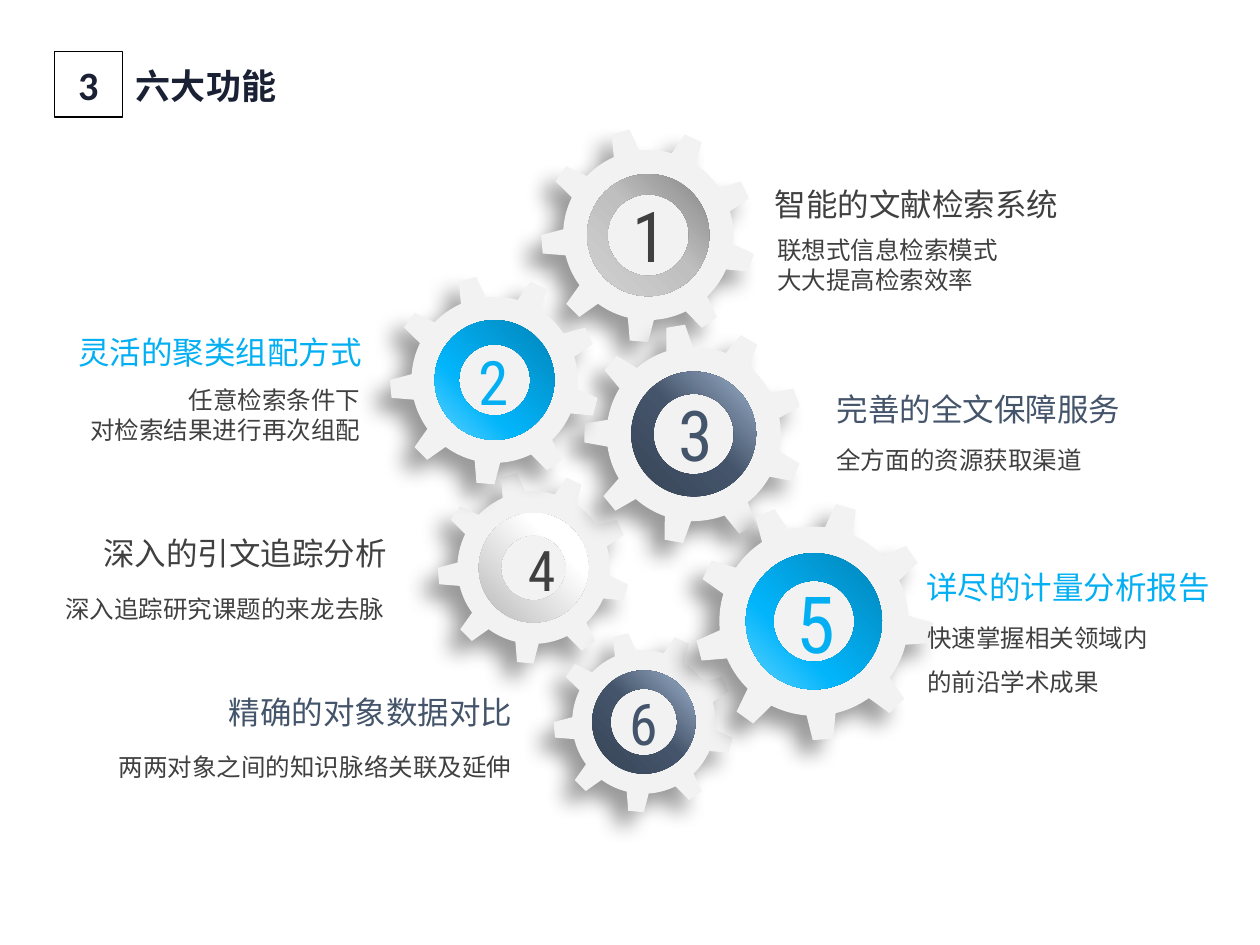
from lxml.etree import SubElement
from pptx import Presentation
from pptx.dml.color import RGBColor
from pptx.enum.shapes import MSO_SHAPE
from pptx.enum.text import MSO_ANCHOR, MSO_AUTO_SIZE, PP_ALIGN
from pptx.oxml import parse_xml
from pptx.oxml.ns import nsdecls, qn
from pptx.util import Pt

NAVY = RGBColor(0x1B, 0x21, 0x35)
BLACK = RGBColor(0, 0, 0)
DARK = RGBColor(0x40, 0x40, 0x40)
SLATE = RGBColor(0x44, 0x54, 0x6A)
BLUE = RGBColor(0x02, 0xAF, 0xF3)
PALE = RGBColor(0xF2, 0xF2, 0xF2)

CJK = "Noto Sans CJK SC"
DIGIT = "Roboto Condensed"
LEFT, CENTER, RIGHT = PP_ALIGN.LEFT, PP_ALIGN.CENTER, PP_ALIGN.RIGHT

# Ring gradients: stops in percent, then the direction
LINEAR = '<a:lin ang="8100000" scaled="0"/>'
RADIAL = '<a:path path="circle"><a:fillToRect l="100000" b="100000"/></a:path>'
WHITE_RING = ([(0, "FFFFFF"), (35, "FFFFFF"), (100, "A6A6A6")], RADIAL)
GRAY_RING = ([(0, "6F6F6F"), (23, "969696"), (48, "BFBFBF"), (100, "D9D9D9")], LINEAR)
SLATE_RING = ([(0, "D6DCE5"), (24, "8497B0"), (49, "44546A"), (100, "333F50")], RADIAL)
BLUE_RING = ([(0, "0175A3"), (61, "02B5FB"), (85, "61D2FE")], LINEAR)


def add_centered(kind, x, y, size, rotation, adjustments):
    shape = page.shapes.add_shape(kind, Pt(x - size / 2), Pt(y - size / 2), Pt(size), Pt(size))
    shape.rotation = rotation
    for index, value in enumerate(adjustments):
        shape.adjustments[index] = value
    shape.line.fill.background()
    shape.shadow.inherit = False
    return shape


def set_text(box, text, size, font, color, align=LEFT, spacing=None, bold=None):
    box.text_frame.text = text
    for paragraph in box.text_frame.paragraphs:
        paragraph.alignment = align
        paragraph.line_spacing = spacing
        for span in paragraph.runs:
            span.font.size = Pt(size)
            span.font.bold = bold
            span.font.color.rgb = color
            span.font.name = font
            SubElement(span._r.get_or_add_rPr(), qn("a:ea")).set("typeface", font)


deck = Presentation()
deck.slide_width, deck.slide_height = Pt(720), Pt(540)
page = deck.slides.add_slide(deck.slide_layouts[6])

# Gears with their rings: centre, gear size and turn, ring size, turn, thickness, gradient
gears = [
    (304.9, 324.4, 110.2, 65, 62.6, 230, 0.202, WHITE_RING),
    (370.4, 134.3, 123.1, 65, 69.8, 215, 0.166, GRAY_RING),
    (396.4, 248, 126, 70.5, 71.3, 215.3, 0.177, SLATE_RING),
    (282.6, 217.1, 120.2, 65, 68.4, 230, 0.202, BLUE_RING),
    (367.9, 412.6, 103.7, 65, 59, 209.8, 0.177, SLATE_RING),
    (465.1, 355, 136.8, 55.6, 77.8, 220.6, 0.202, BLUE_RING),
]
for x, y, size, turn, ring_size, ring_turn, thickness, (stops, direction) in gears:
    gear = add_centered(MSO_SHAPE.GEAR_9, x, y, size, turn, (0.105, 0.018))
    gear.fill.solid()
    gear.fill.fore_color.rgb = PALE
    gear._element.spPr.find(qn("a:effectLst")).append(parse_xml(
        f'<a:outerShdw {nsdecls("a")} blurRad="{Pt(12)}" dist="{Pt(11)}" dir="8100000" '
        'algn="tr" rotWithShape="0"><a:srgbClr val="000000"><a:alpha val="40000"/>'
        '</a:srgbClr></a:outerShdw>'))

    ring = add_centered(MSO_SHAPE.DONUT, x, y, ring_size, ring_turn, (thickness,))
    stop_list = "".join(f'<a:gs pos="{position * 1000}"><a:srgbClr val="{color}"/></a:gs>'
                        for position, color in stops)
    ring._element.spPr.find(qn("a:prstGeom")).addnext(parse_xml(
        f'<a:gradFill {nsdecls("a")} rotWithShape="0"><a:gsLst>{stop_list}</a:gsLst>'
        f'{direction}</a:gradFill>'))

# Title and section number
title = page.shapes.add_textbox(Pt(70.6), Pt(31.7), Pt(212.4), Pt(32.4))
title.text_frame.word_wrap = True
title.text_frame.vertical_anchor = MSO_ANCHOR.MIDDLE
set_text(title, "六大功能", 20, CJK, NAVY, spacing=1.1, bold=True)

badge = page.shapes.add_shape(MSO_SHAPE.RECTANGLE, Pt(31), Pt(29.5), Pt(38.9), Pt(37.4))
badge.shadow.inherit = False
badge.fill.background()
badge.line.color.rgb = BLACK
badge.line.width = Pt(0.75)
badge.text_frame.vertical_anchor = MSO_ANCHOR.MIDDLE
set_text(badge, "3", 23, "Calibri", NAVY, CENTER, bold=True)

# Gear numbers: left, top, width, height, text, size, color, wrap
numbers = [
    (354.2, 106.6, 30.2, 55.4, "1", 40, DARK, False),
    (265.7, 193, 32.4, 49.7, "2", 35, BLUE, False),
    (379.4, 220.3, 36, 55.4, "3", 40, SLATE, False),
    (294.5, 302.4, 23, 46.1, "4", 32, DARK, True),
    (447.1, 324.7, 38.9, 61.9, "5", 45, BLUE, False),
    (351.4, 389.5, 32.4, 47.5, "6", 33, SLATE, False),
]
for left, top, width, height, text, size, color, wrap in numbers:
    box = page.shapes.add_textbox(Pt(left), Pt(top), Pt(width), Pt(height))
    box.text_frame.word_wrap = wrap
    box.text_frame.auto_size = MSO_AUTO_SIZE.SHAPE_TO_FIT_TEXT
    set_text(box, text, size, DIGIT, color, CENTER)

# Headings: left, top, text, color, alignment
headings = [
    (435.6, 102.2, "智能的文献检索系统", DARK, LEFT),
    (36, 186.5, "灵活的聚类组配方式", BLUE, RIGHT),
    (469.4, 219.6, "完善的全文保障服务", SLATE, RIGHT),
    (50.4, 301.7, "深入的引文追踪分析", DARK, RIGHT),
    (520.6, 321.1, "详尽的计量分析报告", BLUE, RIGHT),
    (123.8, 392.4, "精确的对象数据对比", SLATE, LEFT),
]
for left, top, text, color, align in headings:
    box = page.shapes.add_textbox(Pt(left), Pt(top), Pt(177.8), Pt(28.8))
    box.text_frame.word_wrap = False
    box.text_frame.auto_size = MSO_AUTO_SIZE.SHAPE_TO_FIT_TEXT
    set_text(box, text, 18, CJK, color, align)

# Descriptions: left, top, width, height, text, alignment, line spacing
descriptions = [
    (437, 131, 165.6, 41, "联想式信息检索模式\n大大提高检索效率", LEFT, None),
    (8.6, 216.7, 204.5, 41, "任意检索条件下\n对检索结果进行再次组配", RIGHT, None),
    (470.9, 242.6, 163.4, 32.4, "全方面的资源获取渠道", LEFT, 1.5),
    (17.3, 327.6, 209.5, 30.2, "深入追踪研究课题的来龙去脉", RIGHT, 1.5),
    (522.7, 344.2, 164.9, 58.3, "快速掌握相关领域内\n的前沿学术成果", LEFT, 1.5),
    (47.5, 417.6, 252, 32.4, "两两对象之间的知识脉络关联及延伸", RIGHT, 1.5),
]
for left, top, width, height, text, align, spacing in descriptions:
    box = page.shapes.add_textbox(Pt(left), Pt(top), Pt(width), Pt(height))
    box.text_frame.word_wrap = True
    box.text_frame.auto_size = MSO_AUTO_SIZE.SHAPE_TO_FIT_TEXT
    set_text(box, text, 14, CJK, DARK, align, spacing)

deck.save("out.pptx")
